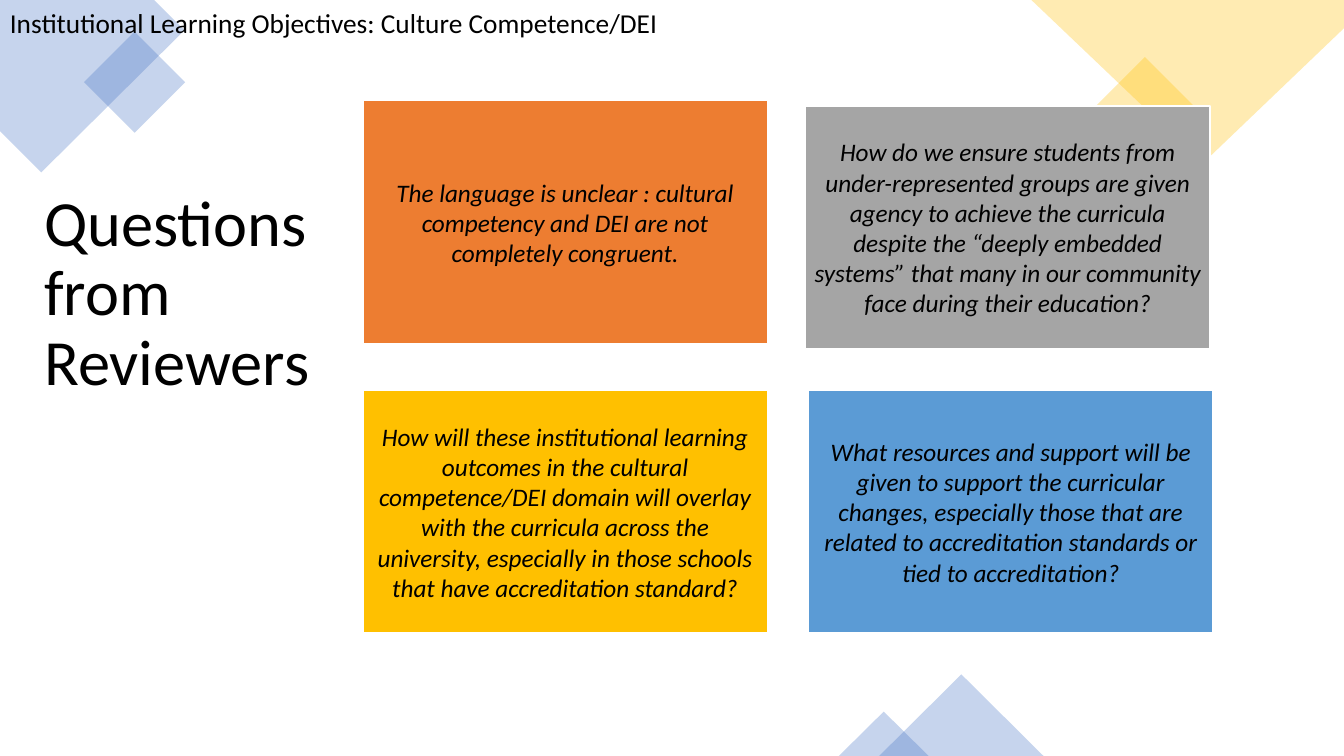
import pptx
import pptx.util
import pptx.dml.color
import pptx.enum.shapes
import pptx.enum.text
import pptx.oxml
import pptx.oxml.ns

Inches = pptx.util.Inches
Pt = pptx.util.Pt
RGBColor = pptx.dml.color.RGBColor
Shape = pptx.enum.shapes.MSO_SHAPE
Align = pptx.enum.text.PP_ALIGN
Anchor = pptx.enum.text.MSO_ANCHOR
Size = pptx.enum.text.MSO_AUTO_SIZE

BLACK = RGBColor(0x00, 0x00, 0x00)
WHITE = RGBColor(0xFF, 0xFF, 0xFF)
BLUE = RGBColor(0x44, 0x72, 0xC4)
GOLD = RGBColor(0xFF, 0xC0, 0x00)
ORANGE = RGBColor(0xED, 0x7D, 0x31)
GRAY = RGBColor(0xA5, 0xA5, 0xA5)
SKY = RGBColor(0x5B, 0x9B, 0xD5)


class Deck:
    font = {"name": "Calibri", "color": BLACK}
    alpha = 30000

    def __init__(self, wide, high):
        self.show = pptx.Presentation()
        self.show.slide_width = Inches(wide)
        self.show.slide_height = Inches(high)
        self.slide = self.show.slides.add_slide(self.show.slide_layouts[5])

    def style(self, item, values):
        for name, value in values.items():
            setattr(item, name, value)

    def label(self, shape, text, frame, para, font):
        body = shape.text_frame
        body.text = text
        self.style(body, {"word_wrap": True, "auto_size": Size.NONE, **frame})
        line = body.paragraphs[0]
        self.style(line, para)
        look = {**self.font, **font}
        line.font.color.rgb = look.pop("color")
        self.style(line.font, look)

    def title(self, text, left, top, wide, high):
        shape = self.slide.shapes.title
        self.style(shape, {"left": Inches(left), "top": Inches(top),
                           "width": Inches(wide), "height": Inches(high)})
        self.label(shape, text, {"vertical_anchor": Anchor.TOP},
                   {"alignment": Align.LEFT, "line_spacing": 0.9}, {"size": Pt(46)})

    def header(self, text, *box):
        shape = self.slide.shapes.add_textbox(*map(Inches, box))
        self.label(shape, text, {"vertical_anchor": Anchor.MIDDLE},
                   {"line_spacing": 0.9}, {"size": Pt(19.5)})

    def paint(self, shape, color):
        shape.shadow.inherit = False
        shape.fill.solid()
        shape.fill.fore_color.rgb = color

    def tint(self, shape, color):
        self.paint(shape, color)
        shape.line.fill.background()
        tone = shape._element.spPr.find(".//" + pptx.oxml.ns.qn("a:srgbClr"))
        tone.append(pptx.oxml.parse_xml(
            f'<a:alpha {pptx.oxml.ns.nsdecls("a")} val="{self.alpha}"/>'))

    def accent(self, kind, color, turn, *box):
        shape = self.slide.shapes.add_shape(kind, *map(Inches, box))
        shape.rotation = turn
        self.tint(shape, color)

    def corner(self, color, points):
        first, *rest = [(Inches(x), Inches(y)) for x, y in points]
        pen = self.slide.shapes.build_freeform(*first)
        pen.add_line_segments(rest, close=True)
        self.tint(pen.convert_to_shape(), color)

    def card(self, text, color, left, top):
        shape = self.slide.shapes.add_shape(
            Shape.RECTANGLE, Inches(left), Inches(top), Inches(4.01), Inches(2.41))
        self.paint(shape, color)
        shape.line.color.rgb = WHITE
        shape.line.width = Pt(1)
        sides = ("left", "top", "right", "bottom")
        frame = {f"margin_{side}": Inches(0.07) for side in sides}
        frame["vertical_anchor"] = Anchor.MIDDLE
        self.label(shape, text, frame, {"alignment": Align.CENTER},
                   {"size": Pt(18), "italic": True})


def main():
    deck = Deck(13.33, 7.5)
    deck.corner(BLUE, [(1.53, 0), (0, 0), (0, 1.3), (0.41, 1.71), (1.83, 0.3)])
    deck.accent(Shape.RECTANGLE, BLUE, 315, 0.98, 0.46, 0.71, 0.71)
    deck.accent(Shape.RECTANGLE, GOLD, 315, 10.98, 0.72, 0.75, 0.75)
    deck.corner(GOLD, [(13.33, 0), (10.23, 0), (11.93, 1.62), (13.33, 0.28)])
    deck.accent(Shape.ISOSCELES_TRIANGLE, BLUE, 0, 8.72, 6.69, 1.63, 0.81)
    deck.accent(Shape.ISOSCELES_TRIANGLE, BLUE, 0, 8.32, 7.06, 0.89, 0.44)
    deck.title("Questions from Reviewers", 0.34, 1.84, 3.52, 2.22)
    cards = [
        ("The language is unclear : cultural competency and DEI are not "
         "completely congruent.", ORANGE, 3.6, 1),
        ("How do we ensure students from under-represented groups are given "
         "agency to achieve the curricula despite the “deeply embedded systems” "
         "that many in our community face during their education?", GRAY, 7.99, 1.05),
        ("How will these institutional learning outcomes in the cultural "
         "competence/DEI domain will overlay with the curricula across the "
         "university, especially in those schools that have accreditation "
         "standard?", GOLD, 3.6, 3.87),
        ("What resources and support will be given to support the curricular "
         "changes, especially those that are related to accreditation standards "
         "or tied to accreditation?", SKY, 8.02, 3.87),
    ]
    for card in cards:
        deck.card(*card)
    deck.header("Institutional Learning Objectives: Culture Competence/DEI",
                0, 0.04, 10.87, 0.41)
    deck.show.save("out.pptx")


if __name__ == "__main__":
    main()
